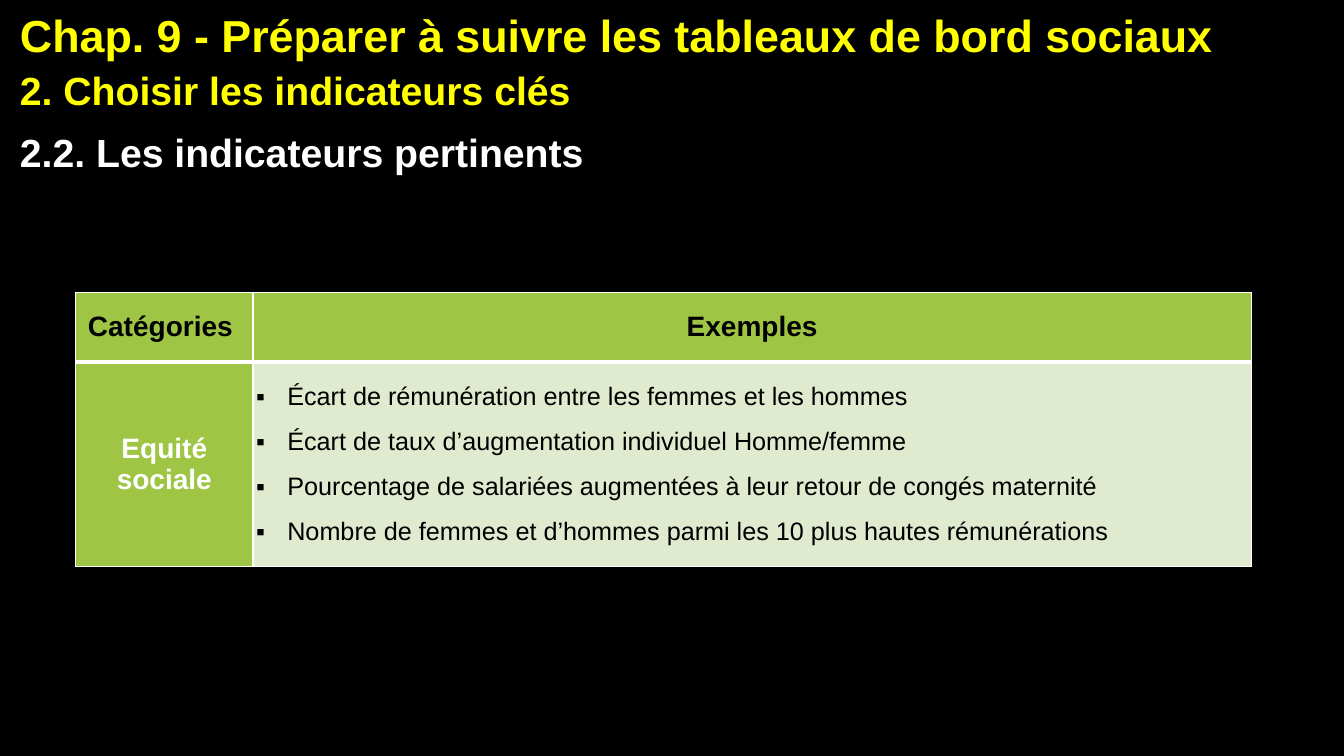
"""Build the slide on relevant social-equity indicators."""
from dataclasses import dataclass

from lxml import etree
from pptx import Presentation
from pptx import util as u
from pptx.dml.color import RGBColor
from pptx.enum import text as t
from pptx.oxml import ns

COLORS = {
    "black": "000000",
    "white": "FFFFFF",
    "yellow": "FFFF00",
    "green": "9EC544",
    "pale": "DFEACF",
}
FONT = "Arial"
INDENT = u.Inches(0.31)


@dataclass(frozen=True)
class Line:
    text: str
    size: int
    color: str
    bold: bool = True
    before: int = 0
    after: int = 0
    centered: bool = False
    bullet: str = ""


@dataclass(frozen=True)
class Heading:
    left: float
    top: float
    width: float
    height: float
    lines: list[Line]


@dataclass(frozen=True)
class Cell:
    fill: str
    lines: list[Line]
    bottom: int = 1


def header(title: str) -> Cell:
    line = Line(title, 20, "black", before=6, after=6, centered=True)
    return Cell("green", [line], bottom=3)


HEADINGS = [
    Heading(0.1, 0.03, 12.46, 1.15, [
        Line("Chap. 9 - Préparer à suivre les tableaux de bord sociaux", 32, "yellow", before=3, after=3),
        Line("2. Choisir les indicateurs clés", 28, "yellow", after=3),
    ]),
    Heading(0.1, 1.22, 11.14, 0.57, [
        Line("2.2. Les indicateurs pertinents", 28, "white", before=6),
    ]),
]
EXAMPLES = [
    "Écart de rémunération entre les femmes et les hommes",
    "Écart de taux d’augmentation individuel Homme/femme",
    "Pourcentage de salariées augmentées à leur retour de congés maternité",
    "Nombre de femmes et d’hommes parmi les 10 plus hautes rémunérations",
]
COLUMNS = [1.76, 9.9]
ROWS = [0.69, 2.03]
CELLS = [
    [header("Catégories "), header("Exemples")],
    [
        Cell("green", [Line(word, 20, "white", centered=True) for word in ("Equité", "sociale")]),
        Cell("pale", [Line(example, 18, "black", bold=False, before=12, bullet="▪") for example in EXAMPLES]),
    ],
]


def rgb(name: str) -> RGBColor:
    return RGBColor.from_string(COLORS[name])


def write(para, content: str, *, size: int, color: str, bold: bool) -> None:
    span = para.add_run()
    span.text = content
    span.font.name = FONT
    span.font.size = u.Pt(size)
    span.font.bold = bold
    span.font.color.rgb = rgb(color)


def add_bullet(para, symbol: str) -> None:
    properties = para._p.get_or_add_pPr()
    properties.set("marL", str(INDENT))
    properties.set("indent", str(-INDENT))
    etree.SubElement(properties, ns.qn("a:buFont")).set("typeface", FONT)
    etree.SubElement(properties, ns.qn("a:buChar")).set("char", symbol)


def fill_frame(frame, lines: list[Line]) -> None:
    for index, line in enumerate(lines):
        para = frame.add_paragraph() if index else frame.paragraphs[0]
        para.alignment = t.PP_ALIGN.CENTER if line.centered else t.PP_ALIGN.LEFT
        para.space_before = u.Pt(line.before)
        para.space_after = u.Pt(line.after)
        if line.bullet:
            add_bullet(para, line.bullet)
        write(para, line.text, size=line.size, color=line.color, bold=line.bold)


def add_heading(page, heading: Heading) -> None:
    box = page.shapes.add_textbox(
        u.Inches(heading.left), u.Inches(heading.top), u.Inches(heading.width), u.Inches(heading.height)
    )
    box.text_frame.word_wrap = True
    box.text_frame.auto_size = t.MSO_AUTO_SIZE.SHAPE_TO_FIT_TEXT
    fill_frame(box.text_frame, heading.lines)


def add_borders(cell, widths: dict[str, int]) -> None:
    properties = cell._tc.get_or_add_tcPr()
    for side, width in widths.items():
        border = etree.SubElement(properties, ns.qn(f"a:ln{side}"), w=str(u.Pt(width)))
        solid = etree.SubElement(border, ns.qn("a:solidFill"))
        etree.SubElement(solid, ns.qn("a:srgbClr"), val=COLORS["white"])


def fill_cell(cell, content: Cell, top: int) -> None:
    cell.vertical_anchor = t.MSO_ANCHOR.MIDDLE
    cell.margin_left = cell.margin_right = u.Inches(0.03)
    cell.margin_top = cell.margin_bottom = u.Inches(0)
    add_borders(cell, {"L": 1, "R": 1, "T": top, "B": content.bottom})
    cell.fill.solid()
    cell.fill.fore_color.rgb = rgb(content.fill)
    fill_frame(cell.text_frame, content.lines)


def add_indicators(page) -> None:
    table = page.shapes.add_table(
        len(ROWS), len(COLUMNS), u.Inches(0.75), u.Inches(2.9), u.Inches(sum(COLUMNS)), u.Inches(sum(ROWS))
    ).table
    table.horz_banding = False
    for column, width in zip(table.columns, COLUMNS):
        column.width = u.Inches(width)
    for row, height in zip(table.rows, ROWS):
        row.height = u.Inches(height)
    for r, contents in enumerate(CELLS):
        for c, content in enumerate(contents):
            top = CELLS[r - 1][c].bottom if r else 1
            fill_cell(table.cell(r, c), content, top)


def main() -> None:
    deck = Presentation()
    deck.slide_width = u.Inches(13.33)
    deck.slide_height = u.Inches(7.5)
    page = deck.slides.add_slide(deck.slide_layouts[6])
    page.background.fill.solid()
    page.background.fill.fore_color.rgb = rgb("black")
    for heading in HEADINGS:
        add_heading(page, heading)
    add_indicators(page)
    deck.save("out.pptx")


if __name__ == "__main__":
    main()
